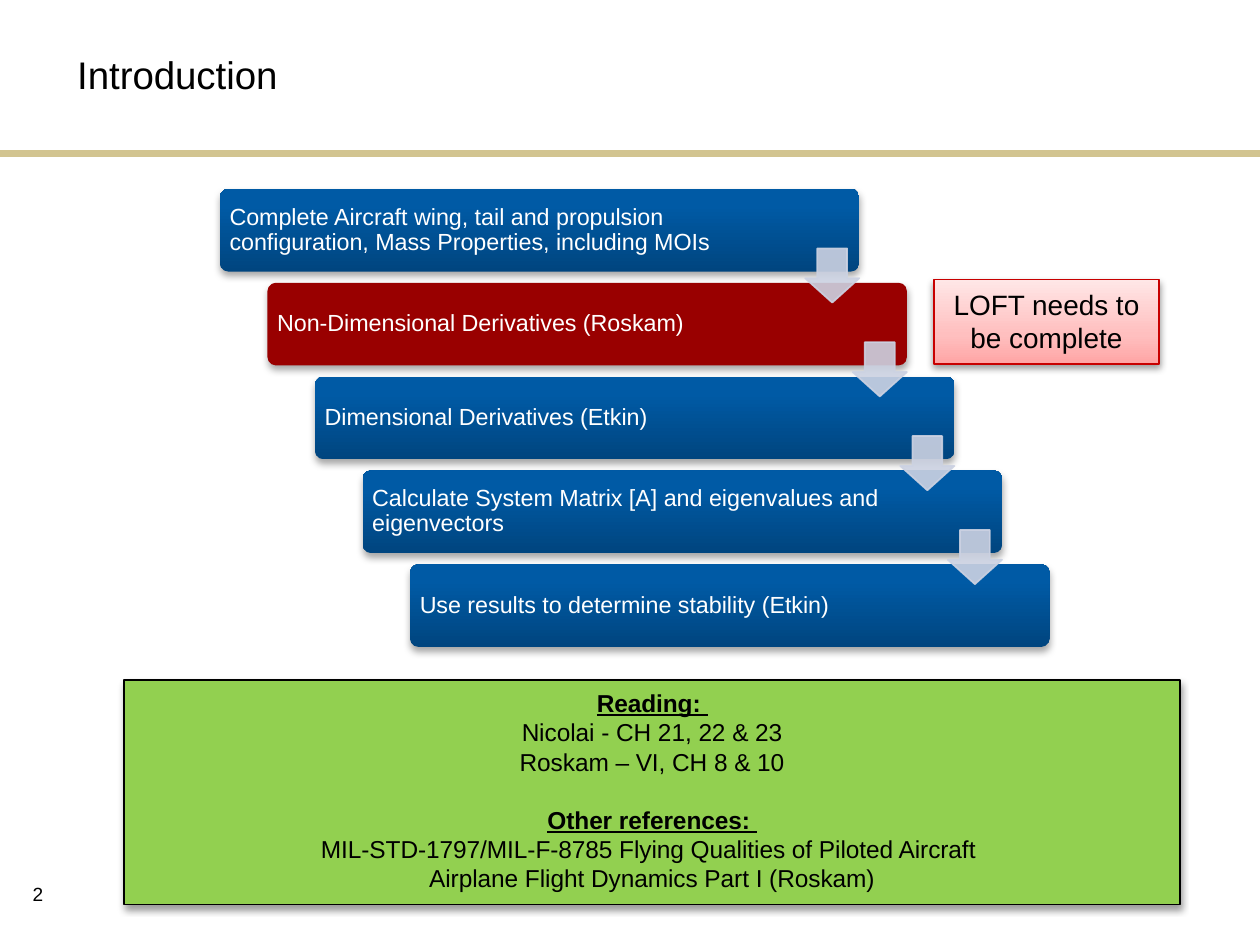
from copy import deepcopy
from dataclasses import dataclass

from lxml.etree import SubElement
from pptx import Presentation
from pptx.dml.color import RGBColor as Rgb
from pptx.enum.shapes import MSO_CONNECTOR as Connector, MSO_SHAPE as Preset
from pptx.enum.text import MSO_ANCHOR as Anchor, PP_ALIGN as Align
from pptx.oxml.ns import qn
from pptx.util import Cm, Pt


@dataclass(frozen=True)
class Theme:
    font: str = "Arial"
    black: str = "000000"
    white: str = "FFFFFF"
    rule: str = "D2C490"
    red: str = "990000"
    green: str = "92D050"
    arrow: str = "CCD2E2"
    note_line: str = "C80000"
    blue_stops: tuple = ((0, "00457F"), (0.8, "005AA5"), (1, "005BA5"))
    note_stops: tuple = ((0, "FFA5A5"), (0.35, "FFBFBF"), (1, "FFE7E7"))
    title_size: float = 16.5
    note_size: float = 12
    reading_size: float = 10.5
    step_size: float = 10
    number_size: float = 8.2


@dataclass(frozen=True)
class Area:
    """A rectangle on the page, in centimetres."""
    left: float
    top: float
    width: float
    height: float

    def lengths(self):
        return Cm(self.left), Cm(self.top), Cm(self.width), Cm(self.height)


@dataclass(frozen=True)
class Step:
    text: str
    highlighted: bool = False


@dataclass(frozen=True)
class ReadingLine:
    text: str
    heading: bool = False
    gap: float = 0


THEME = Theme()
CM_PER_INCH = 2.54
PAGE_WIDTH = Cm(7.51 * CM_PER_INCH)
PAGE_HEIGHT = Cm(5.63 * CM_PER_INCH)
FIRST_STEP = Area(3.33, 2.86, 9.68, 1.25)
STEP_SHIFT, STEP_PITCH = 0.72, 1.42
ARROW = Area(12.19, 3.76, 0.82, 0.82)

STEPS = (
    Step("Complete Aircraft wing, tail and propulsion configuration, "
         "Mass Properties, including MOIs"),
    Step("Non-Dimensional Derivatives (Roskam)", highlighted=True),
    Step("Dimensional Derivatives (Etkin)"),
    Step("Calculate System Matrix [A] and eigenvalues and eigenvectors"),
    Step("Use results to determine stability (Etkin)"),
)
READING = (
    ReadingLine("Reading: ", heading=True),
    ReadingLine("Nicolai - CH 21, 22 & 23\nRoskam – VI, CH 8 & 10"),
    ReadingLine("Other references: ", heading=True, gap=12.4),
    ReadingLine("MIL-STD-1797/MIL-F-8785 Flying Qualities of Piloted Aircraft "),
    ReadingLine("Airplane Flight Dynamics Part I (Roskam)"),
)


def shifted(area: Area, index: int) -> Area:
    """Move an area down the staircase by a number of steps."""
    return Area(area.left + index * STEP_SHIFT, area.top + index * STEP_PITCH,
                area.width, area.height)


def write(para, text: str, *, size: float, color: str = THEME.black,
          align=Align.LEFT, bold: bool = False, spacing: float = 1,
          before: float = 0) -> None:
    """Fill a paragraph, breaking at newlines; bold text is underlined too."""
    para.alignment = align
    para.line_spacing = spacing
    para.space_before = Pt(before)
    for index, line in enumerate(text.split("\n")):
        if index:
            para.add_line_break()
        span = para.add_run()
        span.text = line
        span.font.name = THEME.font
        span.font.size = Pt(size)
        span.font.bold = span.font.underline = bold
        span.font.color.rgb = Rgb.from_string(color)


def set_frame(shape, *, anchor=Anchor.TOP, wrap: bool = True,
              insets: tuple = (0.25, 0.12, 0.25, 0.12)):
    frame = shape.text_frame
    frame.word_wrap = wrap
    frame.vertical_anchor = anchor
    (frame.margin_left, frame.margin_top,
     frame.margin_right, frame.margin_bottom) = map(Cm, insets)
    return frame


def add_box(page, preset, area: Area, *, fill, line: str | None = None):
    """Add a shape; fill is one colour or a tuple of gradient stops."""
    box = page.shapes.add_shape(preset, *area.lengths())
    box.shadow.inherit = False
    if isinstance(fill, str):
        box.fill.solid()
        box.fill.fore_color.rgb = Rgb.from_string(fill)
    else:
        box.fill.gradient()
        box.fill.gradient_angle = 90
        stop_list = next(box.element.spPr.iter(qn("a:gsLst")))
        stop_list.append(deepcopy(stop_list[0]))
        for stop, (position, color) in zip(box.fill.gradient_stops, fill):
            stop.position = position
            stop.color.rgb = Rgb.from_string(color)
    if line:
        box.line.color.rgb = Rgb.from_string(line)
        box.line.width = Pt(0.75)
    else:
        box.line.fill.background()
    return box


def drop_shadow(shape, *, opacity: int, distance: float) -> None:
    effects = shape.element.spPr.find(qn("a:effectLst"))
    shadow = SubElement(effects, qn("a:outerShdw"), blurRad=str(Pt(3.1)),
                        dist=str(Pt(distance)), dir="5400000", rotWithShape="0")
    color = SubElement(shadow, qn("a:srgbClr"), val=THEME.black)
    SubElement(color, qn("a:alpha"), val=str(opacity * 1000))


def add_header(page) -> None:
    rule = page.shapes.add_connector(Connector.STRAIGHT, 0, Cm(2.32),
                                     PAGE_WIDTH, Cm(2.32))
    rule.line.color.rgb = Rgb.from_string(THEME.rule)
    rule.line.width = Pt(3)
    SubElement(rule.element.spPr, qn("a:effectLst"))
    title = page.shapes.add_textbox(*Area(0.92, 0, 13.54, 2.25).lengths())
    frame = set_frame(title, anchor=Anchor.MIDDLE)
    write(frame.paragraphs[0], "Introduction", size=THEME.title_size)


def add_page_number(page) -> None:
    number = page.shapes.add_textbox(*Area(0.12, 13.23, 0.91, 0.64).lengths())
    frame = set_frame(number, wrap=False)
    write(frame.paragraphs[0], "2", size=THEME.number_size, align=Align.CENTER)


def add_step(page, index: int, step: Step) -> None:
    fill = THEME.red if step.highlighted else THEME.blue_stops
    box = add_box(page, Preset.ROUNDED_RECTANGLE, shifted(FIRST_STEP, index), fill=fill)
    box.adjustments[0] = 0.1
    drop_shadow(box, opacity=35, distance=1.8)
    frame = set_frame(box, anchor=Anchor.MIDDLE, insets=(0.11, 0.1, 1.52, 0.1))
    write(frame.paragraphs[0], step.text, size=THEME.step_size,
          color=THEME.white, spacing=0.9)


def add_arrow(page, index: int) -> None:
    arrow = add_box(page, Preset.DOWN_ARROW, shifted(ARROW, index),
                    fill=THEME.arrow, line=THEME.arrow)
    arrow.adjustments[0], arrow.adjustments[1] = 0.55, 0.45
    for color in arrow.element.spPr.iter(qn("a:srgbClr")):
        SubElement(color, qn("a:alpha"), val="90000")


def add_reading(page) -> None:
    box = add_box(page, Preset.RECTANGLE, Area(1.88, 10.29, 15.99, 3.4),
                  fill=THEME.green, line=THEME.black)
    drop_shadow(box, opacity=38, distance=1.6)
    frame = set_frame(box)
    for index, line in enumerate(READING):
        para = frame.add_paragraph() if index else frame.paragraphs[0]
        write(para, line.text, size=THEME.reading_size, align=Align.CENTER,
              bold=line.heading, before=line.gap)


def add_note(page) -> None:
    box = add_box(page, Preset.RECTANGLE, Area(14.14, 4.23, 3.41, 1.28),
                  fill=THEME.note_stops, line=THEME.note_line)
    drop_shadow(box, opacity=38, distance=1.6)
    write(set_frame(box).paragraphs[0], "LOFT needs to be complete",
          size=THEME.note_size, align=Align.CENTER)


def main() -> None:
    deck = Presentation()
    deck.slide_width, deck.slide_height = PAGE_WIDTH, PAGE_HEIGHT
    page = deck.slides.add_slide(deck.slide_layouts[6])
    add_header(page)
    add_page_number(page)
    for index, step in enumerate(STEPS):
        add_step(page, index, step)
    for index in range(len(STEPS) - 1):
        add_arrow(page, index)
    add_reading(page)
    add_note(page)
    deck.save("out.pptx")


if __name__ == "__main__":
    main()
